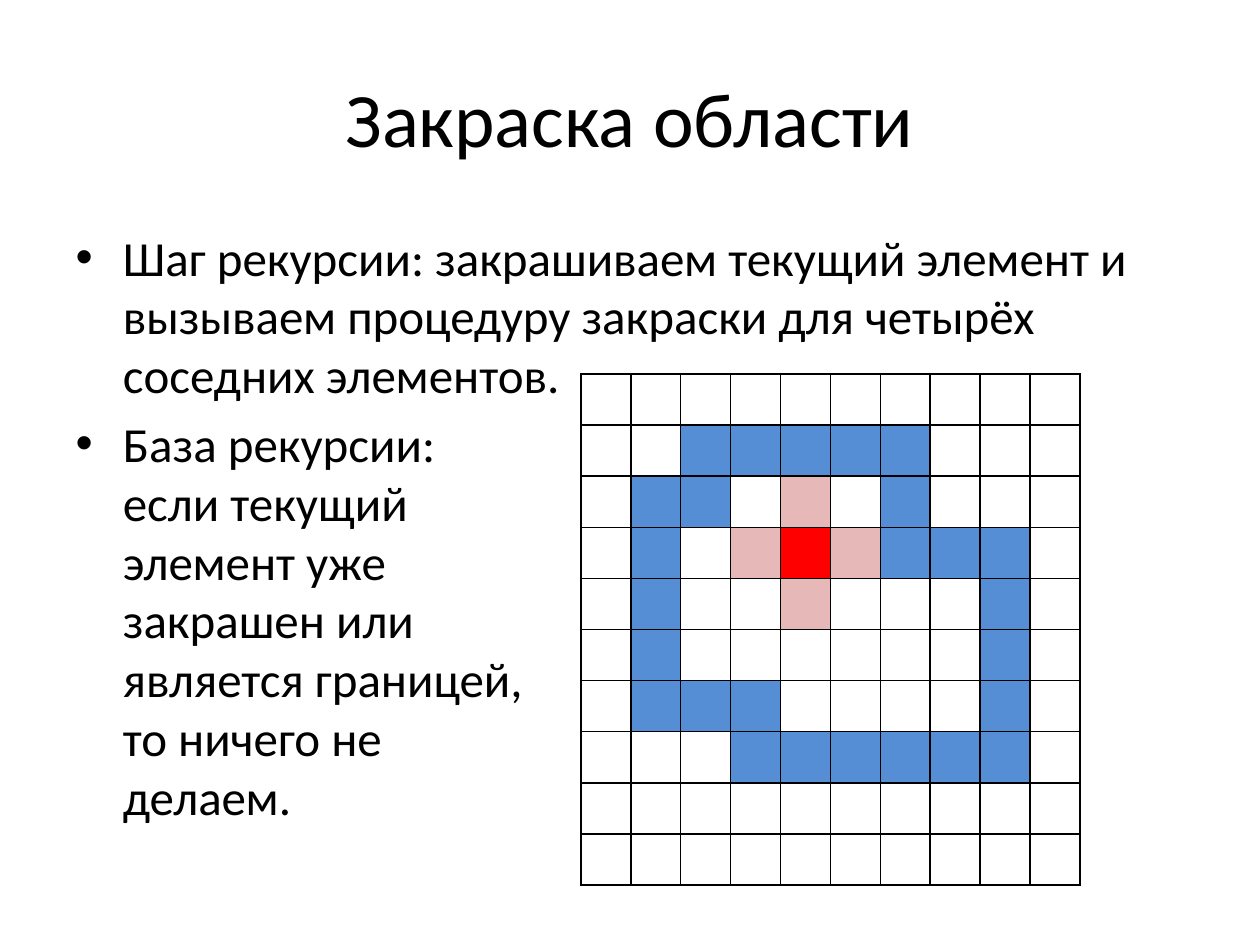
from dataclasses import dataclass

from lxml import etree
from pptx import Presentation
from pptx.dml.color import RGBColor
from pptx.enum import text
from pptx.oxml import ns
from pptx.util import Cm, Pt


@dataclass(frozen=True)
class Theme:
    font: str = "Calibri"
    title_size: int = 44
    body_size: int = 28
    ink: str = "000000"
    border: str = "558ED5"
    current: str = "FF0000"
    neighbour: str = "E6B9B8"


THEME = Theme()
CELL_COLOURS = {"#": THEME.border, "o": THEME.current, "+": THEME.neighbour}
REGION = (
    "..........",
    "..#####...",
    ".##.+.#...",
    ".#.+o+###.",
    ".#..+...#.",
    ".#......#.",
    ".###....#.",
    "...######.",
    "..........",
    "..........",
)
CELL_WIDTH, CELL_HEIGHT = Cm(1.006), Cm(1.03)

STEP = ("Шаг рекурсии: закрашиваем текущий элемент и вызываем процедуру "
        "закраски для четырёх соседних элементов.")
BASE = "\v".join((
    "База рекурсии:", "если текущий", "элемент уже", "закрашен или",
    "является границей,", "то ничего не", "делаем.",
))


def place(shape, left, top, width, height):
    shape.left, shape.top = Cm(left), Cm(top)
    shape.width, shape.height = Cm(width), Cm(height)


def write_paragraph(paragraph, content, size):
    paragraph.text = content
    paragraph.font.name = THEME.font
    paragraph.font.size = Pt(size)
    paragraph.font.color.rgb = RGBColor.from_string(THEME.ink)


def fill_title(shape, content):
    place(shape, 1.27, 0.76, 22.86, 3.18)
    shape.text_frame.vertical_anchor = text.MSO_ANCHOR.MIDDLE
    paragraph = shape.text_frame.paragraphs[0]
    write_paragraph(paragraph, content, THEME.title_size)
    paragraph.alignment = text.PP_ALIGN.CENTER


def fill_list(shape, items):
    place(shape, 1.27, 4.45, 22.86, 12.57)
    frame = shape.text_frame
    for index, item in enumerate(items):
        paragraph = frame.add_paragraph() if index else frame.paragraphs[0]
        write_paragraph(paragraph, item, THEME.body_size)


def outline_cell(cell):
    """Draw a one-point line on all four sides; call before setting the fill."""
    properties = cell._tc.get_or_add_tcPr()
    for side in ("lnL", "lnR", "lnT", "lnB"):
        line = etree.SubElement(properties, ns.qn(f"a:{side}"), w=str(Pt(1)))
        solid = etree.SubElement(line, ns.qn("a:solidFill"))
        etree.SubElement(solid, ns.qn("a:srgbClr"), val=THEME.ink)


def add_region_grid(slide, left, top):
    rows, columns = len(REGION), len(REGION[0])
    table = slide.shapes.add_table(
        rows, columns, Cm(left), Cm(top),
        CELL_WIDTH * columns, CELL_HEIGHT * rows).table
    table.first_row = table.horz_banding = False
    for row, marks in zip(table.rows, REGION):
        row.height = CELL_HEIGHT
        for cell, mark in zip(row.cells, marks):
            outline_cell(cell)
            if mark in CELL_COLOURS:
                cell.fill.solid()
                cell.fill.fore_color.rgb = RGBColor.from_string(CELL_COLOURS[mark])
            else:
                cell.fill.background()


def main():
    presentation = Presentation()
    presentation.slide_width, presentation.slide_height = Cm(25.4), Cm(19.05)
    slide = presentation.slides.add_slide(presentation.slide_layouts[1])
    fill_title(slide.shapes.title, "Закраска области")
    fill_list(slide.placeholders[1], (STEP, BASE))
    add_region_grid(slide, 11.71, 7.54)
    presentation.save("out.pptx")


if __name__ == "__main__":
    main()
